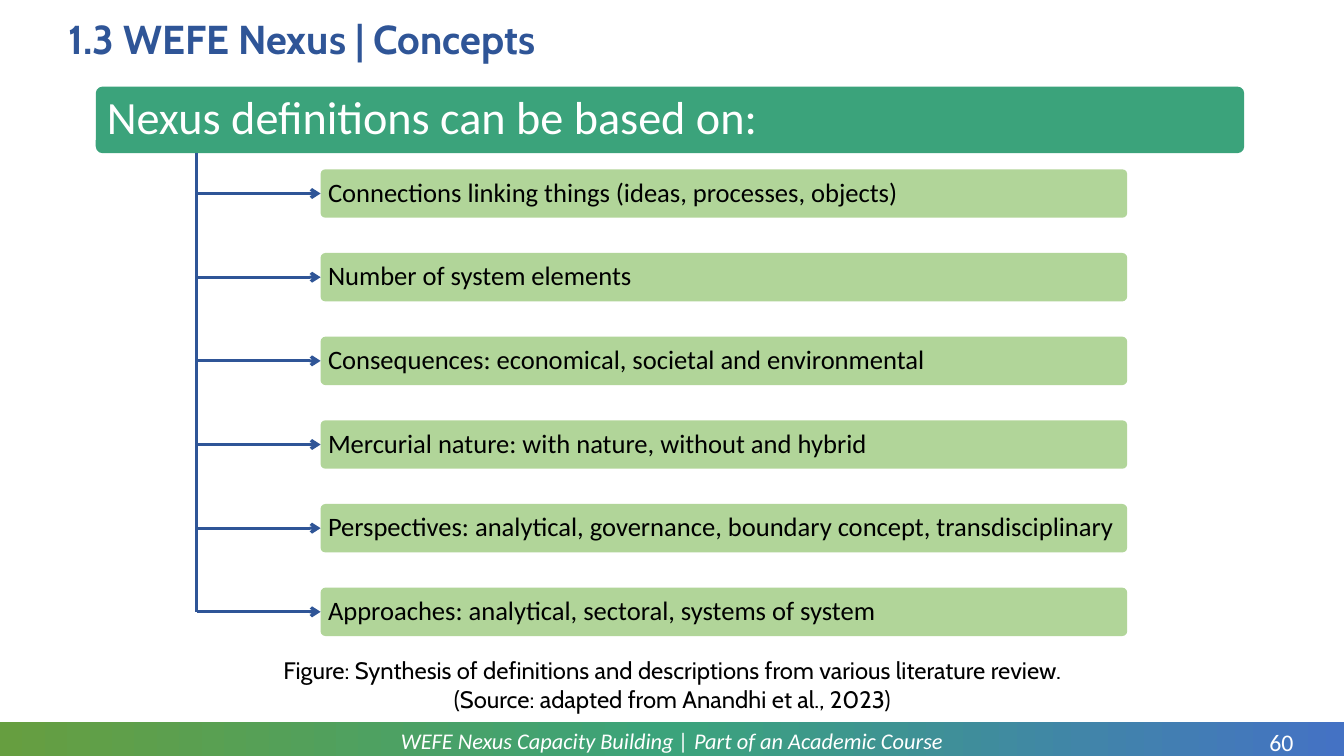
from copy import deepcopy

from lxml import etree
from pptx import Presentation, util as u
from pptx.dml.color import RGBColor
from pptx.enum import shapes as s, text as t
from pptx.oxml.ns import qn

HUES = {"navy": "2F5597", "teal": "3BA37B", "lime": "A9D18E", "leaf": "669E40",
        "blue": "4472C4", "white": "FFFFFF", "black": "000000"}
ITEMS = [
    "Connections linking things (ideas, processes, objects)",
    "Number of system elements",
    "Consequences: economical, societal and environmental",
    "Mercurial nature: with nature, without and hybrid",
    "Perspectives: analytical, governance, boundary concept, transdisciplinary",
    "Approaches: analytical, sectoral, systems of system",
]
LEFT, MID = t.PP_ALIGN.LEFT, t.PP_ALIGN.CENTER
TOP, STEP, HIGH = 1.68, 0.83, 0.48
TRUNK, EDGE = 1.95, 3.18


def hue(name):
    return RGBColor.from_string(HUES[name])


def assign(item, values):
    for key, value in values.items():
        setattr(item, key, value)


class Page:
    def __init__(self, deck):
        self.slide = deck.slides.add_slide(deck.slide_layouts[5])
        self.shapes = self.slide.shapes

    def words(self, shape, lines, size, color, face="Calibri", align=LEFT,
              pad=(0.1, 0.05), space=1.0, anchor=t.MSO_ANCHOR.MIDDLE, **extra):
        """Fill a shape with paragraphs; pad holds side and top insets in inches."""
        frame = shape.text_frame
        side, top = map(u.Inches, pad)
        assign(frame, {"word_wrap": True, "auto_size": t.MSO_AUTO_SIZE.NONE,
                       "vertical_anchor": anchor, "margin_left": side,
                       "margin_right": side, "margin_top": top,
                       "margin_bottom": top})
        frame.text = "\n".join(lines)
        for para in frame.paragraphs:
            assign(para, {"alignment": align, "line_spacing": space})
            font = para.runs[0].font
            assign(font, {"name": face, "size": u.Pt(size), **extra})
            font.color.rgb = hue(color)

    def title(self, box, line, **style):
        shape = self.shapes.title
        sides = ("left", "top", "width", "height")
        assign(shape, dict(zip(sides, map(u.Inches, box))))
        self.words(shape, [line], **style)

    def label(self, box, lines, **style):
        self.words(self.shapes.add_textbox(*map(u.Inches, box)), lines, **style)

    def block(self, kind, box):
        shape = self.shapes.add_shape(kind, *map(u.Inches, box))
        shape.shadow.inherit = False
        shape.line.fill.background()
        return shape

    def card(self, box, line, fill, alpha=100, **style):
        shape = self.block(s.MSO_SHAPE.ROUNDED_RECTANGLE, box)
        shape.adjustments[0] = 0.1
        shape.fill.solid()
        shape.fill.fore_color.rgb = hue(fill)
        if alpha < 100:
            tint = shape._element.spPr.find(".//" + qn("a:srgbClr"))
            etree.SubElement(tint, qn("a:alpha"), val=str(alpha * 1000))
        self.words(shape, [line], space=0.9, **style)

    def band(self, box, colors):
        """Draw a bar with evenly spaced gradient stops from left to right."""
        shape = self.block(s.MSO_SHAPE.RECTANGLE, box)
        shape.fill.gradient()
        shape.fill.gradient_angle = 0
        stops = shape._element.spPr.find(".//" + qn("a:gsLst"))
        for _ in colors[2:]:
            stops.append(deepcopy(stops[0]))
        for i, (stop, name) in enumerate(zip(shape.fill.gradient_stops, colors)):
            stop.position = i / (len(colors) - 1)
            stop.color.rgb = hue(name)

    def link(self, ends, arrow=True):
        wire = self.shapes.add_connector(s.MSO_CONNECTOR.STRAIGHT,
                                         *map(u.Inches, ends))
        wire.line.width = u.Pt(2.25)
        wire.line.color.rgb = hue("navy")
        if arrow:
            etree.SubElement(wire.line._ln, qn("a:tailEnd"), type="arrow")
        etree.SubElement(wire._element.spPr, qn("a:effectLst"))


def main():
    deck = Presentation()
    assign(deck, {"slide_width": u.Inches(13.33), "slide_height": u.Inches(7.5)})
    page = Page(deck)
    page.band((0, 7.16, 13.33, 0.34), ["leaf", "teal", "blue"])
    page.label((0.92, 7.17, 11.49, 0.36),
               ["WEFE Nexus Capacity Building | Part of an Academic Course"],
               size=16, color="white", align=MID, italic=True)
    page.label((12.41, 7.22, 0.6, 0.29), ["60"], size=17, color="white",
               align=MID, pad=(0, 0), anchor=t.MSO_ANCHOR.TOP)
    page.title((0.58, 0.13, 12.15, 0.56), "1.3 WEFE Nexus | Concepts", size=28.8,
               color="navy", face="Cabin", space=0.9, bold=True)
    page.card((0.95, 0.86, 11.39, 0.66), "Nexus definitions can be based on:",
              "teal", size=33, color="white", pad=(0.09, 0.07))
    mids = [TOP + i * STEP + HIGH / 2 for i in range(len(ITEMS))]
    for mid, item in zip(mids, ITEMS):
        page.card((EDGE, mid - HIGH / 2, 8, HIGH), item, "lime", alpha=90,
                  size=19, color="black", pad=(0.06, 0.05))
    page.link((TRUNK, 1.52, TRUNK, mids[-1]), arrow=False)
    for mid in mids:
        page.link((TRUNK, mid, EDGE, mid))
    page.label((0.45, 6.46, 12.44, 0.67),
               ["Figure: Synthesis of definitions and descriptions from various "
                "literature review.",
                "(Source: adapted from Anandhi et al., 2023)"],
               size=17, color="black", face="Cabin", align=MID,
               anchor=t.MSO_ANCHOR.TOP)
    deck.save("out.pptx")


if __name__ == "__main__":
    main()
